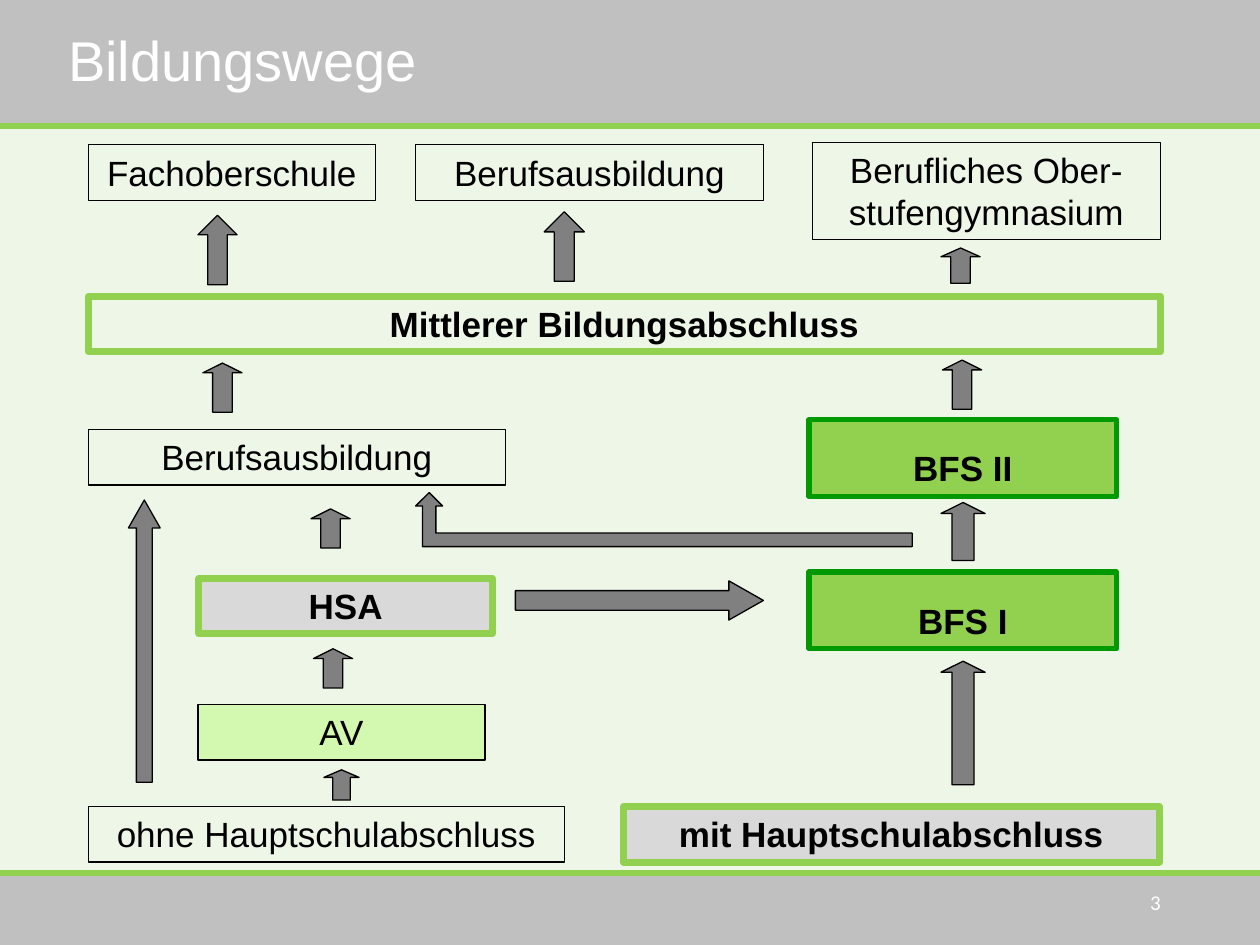
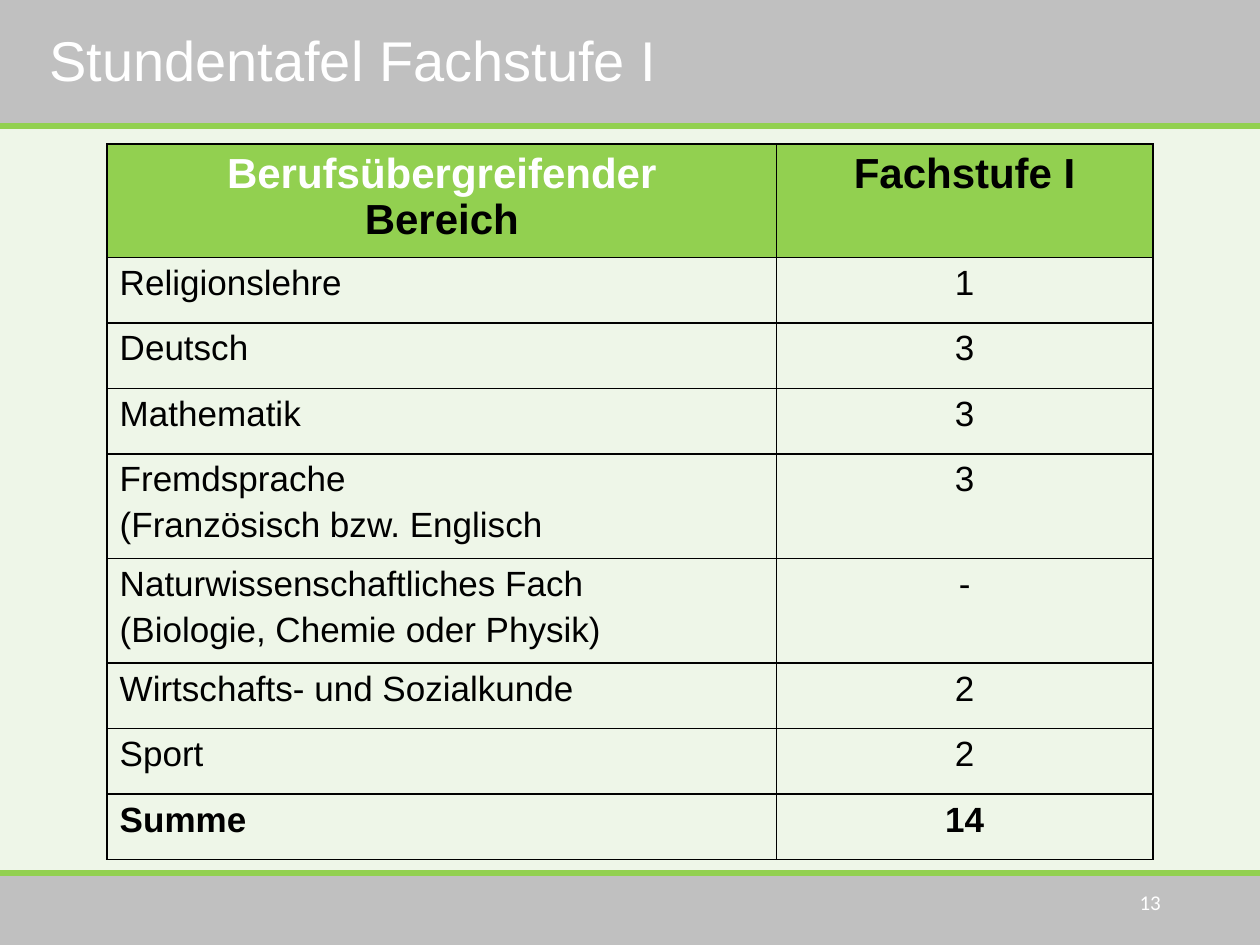
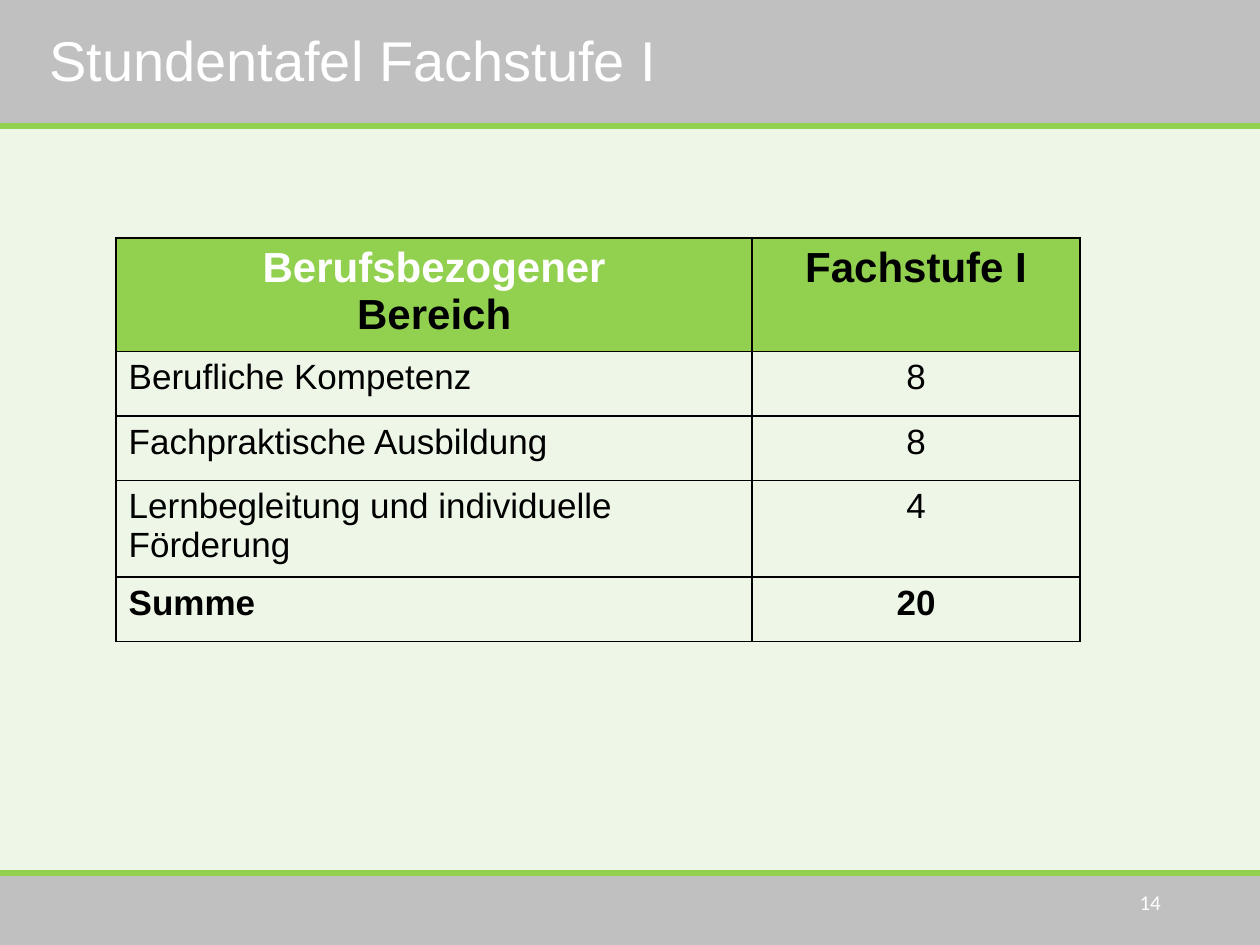
from dataclasses import dataclass
from itertools import cycle

from lxml.etree import SubElement
from pptx import Presentation
from pptx.dml.color import RGBColor
from pptx.enum.shapes import MSO_CONNECTOR, MSO_SHAPE as Preset
from pptx.enum.text import MSO_ANCHOR as Anchor, PP_ALIGN as Align
from pptx.oxml.ns import qn
from pptx.util import Cm, Pt


@dataclass(frozen=True)
class Theme:
    """Colours, fonts and type sizes of the deck."""
    paper: str = "EEF6E8"
    band: str = "C0C0C0"
    accent: str = "92D050"
    dark_green: str = "009900"
    pale_green: str = "D3F9B1"
    pale_grey: str = "D9D9D9"
    arrow: str = "808080"
    ink: str = "000000"
    white: str = "FFFFFF"
    font: str = "Arial"
    number_font: str = "Calibri"
    title_size: int = 32
    header_size: int = 24
    body_size: int = 20
    number_size: int = 12


@dataclass(frozen=True)
class Box:
    """A region in centimetres."""
    left: float
    top: float
    width: float
    height: float

    def inner(self, left, top, width, height):
        """Return a box placed relative to this one."""
        return Box(self.left + left, self.top + top, width, height)

    def lengths(self):
        """Return the four lengths for a shape."""
        return Cm(self.left), Cm(self.top), Cm(self.width), Cm(self.height)


THEME = Theme()
PAGE = Box(0, 0, 25.4, 19.05)
TOP_BAND = Box(0, 0, PAGE.width, 2.54)
BOTTOM_BAND = Box(0, 17.65, PAGE.width, 1.4)
RULES = (2.54, 17.6)

BOX_STYLES = {
    "plain": dict(line=THEME.ink, weight=0.75),
    "course": dict(fill=THEME.pale_green, line=THEME.ink, weight=0.75),
    "degree": dict(line=THEME.accent, weight=4),
    "entry": dict(fill=THEME.pale_grey, line=THEME.accent, weight=4),
    "school": dict(fill=THEME.accent, line=THEME.dark_green, weight=3),
}
BOLD_STYLES = {"degree", "entry", "school"}

STATIONS = [
    ("Fachoberschule", "plain", (0, 0.05, 5.79, 1.12)),
    ("Berufsausbildung", "plain", (6.6, 0.05, 7.01, 1.12)),
    ("Berufliches Ober-stufengymnasium", "plain", (14.6, 0, 7.01, 1.96)),
    ("Mittlerer Bildungsabschluss", "degree", (0, 3.1, 21.62, 1.12)),
    ("Berufsausbildung", "plain", (0, 5.79, 8.41, 1.12)),
    ("BFS II", "school", (14.53, 5.59, 6.2, 1.55)),
    ("BFS I", "school", (14.53, 8.66, 6.2, 1.55)),
    ("HSA", "entry", (2.23, 8.79, 5.92, 1.12)),
    ("AV", "course", (2.21, 11.33, 5.79, 1.12)),
    ("ohne Hauptschulabschluss", "plain", (0, 13.39, 9.6, 1.12)),
    ("mit Hauptschulabschluss", "entry", (10.79, 13.39, 10.8, 1.12)),
]

UP_ARROWS = [
    (0.5, (2.21, 1.47, 0.79, 1.4)),
    (0.5, (9.19, 1.4, 0.81, 1.4)),
    (0.25, (17.19, 2.13, 0.79, 0.71)),
    (0.25, (2.31, 4.45, 0.79, 0.99)),
    (0.25, (17.22, 4.39, 0.79, 0.99)),
    (0.25, (4.49, 7.39, 0.79, 0.79)),
    (0.25, (17.19, 7.26, 0.89, 1.17)),
    (0.25, (4.54, 10.21, 0.79, 0.79)),
    (0.25, (17.19, 10.46, 0.89, 2.49)),
    (0.25, (4.75, 12.65, 0.71, 0.61)),
    (0.88, (0.81, 7.21, 0.64, 5.69)),
]

GENERAL_SUBJECTS = [
    ("Religionslehre", "1", 1.32),
    ("Deutsch", "3", 1.32),
    ("Mathematik", "3", 1.32),
    ("Fremdsprache\n(Französisch bzw. Englisch", "3", 2.11),
    ("Naturwissenschaftliches Fach\n(Biologie, Chemie oder Physik)", "-", 2.11),
    ("Wirtschafts- und Sozialkunde", "2", 1.32),
    ("Sport", "2", 1.32),
    ("Summe", "14", 1.32),
]

VOCATIONAL_SUBJECTS = [
    ("Berufliche Kompetenz", "8", 1.3),
    ("Fachpraktische Ausbildung", "8", 1.3),
    ("Lernbegleitung und individuelle Förderung", "4", 1.82),
    ("Summe", "20", 1.3),
]


def rgb(code):
    """Turn a hex code into a colour."""
    return RGBColor.from_string(code)


def write(frame, text, size=THEME.body_size, font=THEME.font, colors=(THEME.ink,),
          bold=False, align=Align.LEFT, anchor=Anchor.TOP, spacing=None):
    """Write paragraphs split at newlines and lines split at vertical tabs."""
    frame.word_wrap = True
    frame.vertical_anchor = anchor
    for index, content in enumerate(text.split("\n")):
        paragraph = frame.add_paragraph() if index else frame.paragraphs[0]
        paragraph.alignment = align
        if spacing:
            paragraph.line_spacing = spacing
        if index:
            paragraph.space_before = Pt(size * 0.2)
        for number, (line, color) in enumerate(zip(content.split("\v"), cycle(colors))):
            if number:
                paragraph.add_line_break()
            run = paragraph.add_run()
            run.text = line
            run.font.size = Pt(size)
            run.font.name = font
            run.font.bold = bold
            run.font.color.rgb = rgb(color)


def add_preset(slide, preset, box, fill=None, line=None, weight=0.75):
    """Add a flat preset shape."""
    shape = slide.shapes.add_shape(preset, *box.lengths())
    shape.shadow.inherit = False
    if fill:
        shape.fill.solid()
        shape.fill.fore_color.rgb = rgb(fill)
    else:
        shape.fill.background()
    if line:
        shape.line.color.rgb = rgb(line)
        shape.line.width = Pt(weight)
    else:
        shape.line.fill.background()
    return shape


def add_rule(slide, top):
    """Add a green line across the page."""
    rule = slide.shapes.add_connector(
        MSO_CONNECTOR.STRAIGHT, 0, Cm(top), Cm(PAGE.width), Cm(top))
    rule.line.color.rgb = rgb(THEME.accent)
    rule.line.width = Pt(3.5)
    SubElement(rule.element.spPr, qn("a:effectLst"))
    return rule


def furnish_master(master, slide):
    """Draw bands and rules and move them behind the master placeholders."""
    master.background.fill.solid()
    master.background.fill.fore_color.rgb = rgb(THEME.paper)
    bands = [add_preset(slide, Preset.RECTANGLE, box, fill=THEME.band)
             for box in (BOTTOM_BAND, TOP_BAND)]
    rules = [add_rule(slide, top) for top in RULES]
    for position, part in enumerate(bands + rules, start=2):
        master.shapes.element.insert(position, part.element)


def add_heading(slide, text, box):
    """Place the title in its band."""
    title = slide.shapes.title
    title.left, title.top, title.width, title.height = box.lengths()
    write(title.text_frame, text, size=THEME.title_size, colors=(THEME.white,),
          anchor=Anchor.MIDDLE, spacing=0.9)


def add_page_number(slide, number, band):
    """Place the page number in the bottom band."""
    box = band.inner(17.93, 0.03, 5.72, 1.02)
    label = slide.shapes.add_textbox(*box.lengths())
    write(label.text_frame, str(number), size=THEME.number_size, font=THEME.number_font,
          colors=(THEME.white,), align=Align.RIGHT, anchor=Anchor.MIDDLE)


def add_pathways(slide, region):
    """Draw the school pathways as boxes and arrows."""
    for name, style, place in STATIONS:
        station = add_preset(slide, Preset.RECTANGLE, region.inner(*place), **BOX_STYLES[style])
        write(station.text_frame, name, bold=style in BOLD_STYLES, align=Align.CENTER,
              spacing=1.5 if style == "school" else None)
    arrow_style = dict(fill=THEME.arrow, line=THEME.ink)
    for head, place in UP_ARROWS:
        step = add_preset(slide, Preset.UP_ARROW, region.inner(*place), **arrow_style)
        step.adjustments[1] = head
    crossover = add_preset(slide, Preset.RIGHT_ARROW, region.inner(8.61, 8.84, 5, 0.79),
                           **arrow_style)
    crossover.adjustments[1] = 0.88
    way_back = add_preset(slide, Preset.BENT_UP_ARROW, region.inner(6.6, 7.06, 10.01, 1.09),
                          **arrow_style)
    way_back.element.spPr.find(qn("a:xfrm")).set("flipH", "1")


def style_cell(cell, fill=None):
    """Give a cell thin black borders and its fill."""
    properties = cell._tc.get_or_add_tcPr()
    for side in ("lnL", "lnR", "lnT", "lnB"):
        border = SubElement(properties, qn(f"a:{side}"), w=str(Pt(1)))
        paint = SubElement(border, qn("a:solidFill"))
        SubElement(paint, qn("a:srgbClr"), val=THEME.ink)
    if fill:
        cell.fill.solid()
        cell.fill.fore_color.rgb = rgb(fill)
    else:
        cell.fill.background()


def add_timetable(slide, region, area, subjects, header_height, subject_share):
    """Build a table of subjects and weekly hours."""
    rows = [(f"{area}\vBereich", "Fachstufe I", header_height), *subjects]
    table = slide.shapes.add_table(len(rows), 2, *region.lengths()).table
    table.first_row = table.horz_banding = False
    for column, share in zip(table.columns, (subject_share, 1 - subject_share)):
        column.width = Cm(region.width * share)
    for index, (subject, hours, height) in enumerate(rows):
        table.rows[index].height = Cm(height)
        header = index == 0
        look = dict(size=THEME.header_size if header else THEME.body_size,
                    bold=header or subject == "Summe")
        subject_cell, hours_cell = table.rows[index].cells
        for cell in (subject_cell, hours_cell):
            style_cell(cell, THEME.accent if header else None)
        write(subject_cell.text_frame, subject,
              colors=(THEME.white, THEME.ink) if header else (THEME.ink,),
              align=Align.CENTER if header else Align.LEFT, **look)
        write(hours_cell.text_frame, hours, align=Align.CENTER, **look)


def pathway_slide(slide):
    """Fill the slide on school pathways."""
    add_heading(slide, "Bildungswege", TOP_BAND.inner(1.12, 0.03, 15.57, 2.49))
    add_page_number(slide, 3, BOTTOM_BAND)
    add_pathways(slide, Box(1.78, 2.87, 21.62, 14.51))


def timetable_slide(slide, number, region, **timetable):
    """Fill a slide with a timetable."""
    add_heading(slide, "Stundentafel Fachstufe I", TOP_BAND.inner(0.74, 0, 17, 2.54))
    add_page_number(slide, number, BOTTOM_BAND)
    add_timetable(slide, region, **timetable)


def main():
    """Build and save the deck."""
    deck = Presentation()
    deck.slide_width, deck.slide_height = Cm(PAGE.width), Cm(PAGE.height)
    pathways, general, vocational = [
        deck.slides.add_slide(deck.slide_layouts[5]) for _ in range(3)]
    furnish_master(deck.slide_master, pathways)
    pathway_slide(pathways)
    timetable_slide(general, 13, Box(2.16, 2.9, 21.08, 14.43),
                    area="Berufsübergreifender", subjects=GENERAL_SUBJECTS,
                    header_height=2.29, subject_share=0.64)
    timetable_slide(vocational, 14, Box(2.34, 4.8, 19.43, 7.85),
                    area="Berufsbezogener", subjects=VOCATIONAL_SUBJECTS,
                    header_height=2.13, subject_share=0.66)
    deck.save("out.pptx")


if __name__ == "__main__":
    main()
